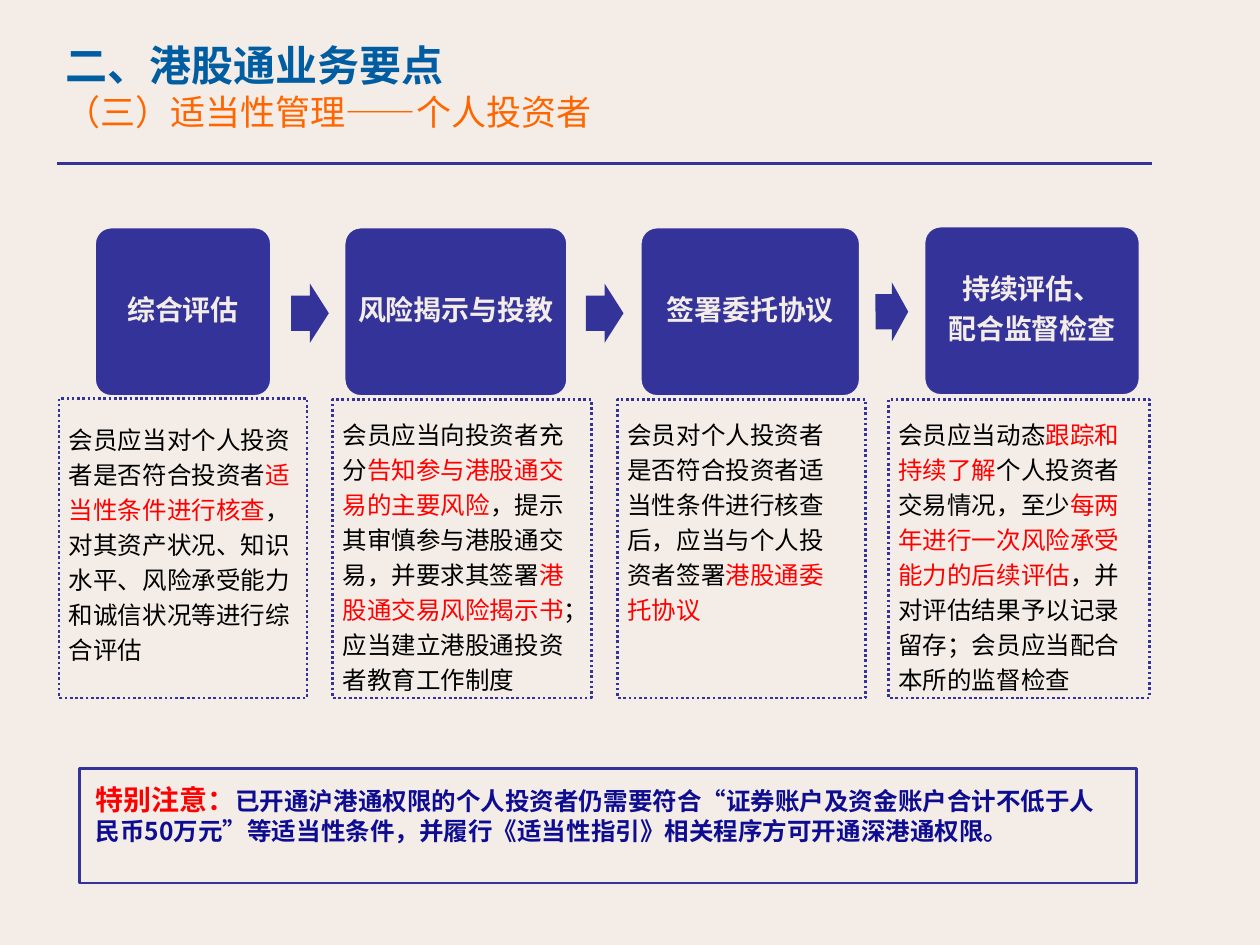
from itertools import cycle

from lxml.etree import SubElement
from pptx import Presentation
from pptx.dml.color import RGBColor
from pptx.enum.dml import MSO_LINE as Dash
from pptx.enum.shapes import MSO_CONNECTOR as Conn, MSO_SHAPE as Kind
from pptx.enum.text import MSO_ANCHOR as Anchor, MSO_AUTO_SIZE as Fit, PP_ALIGN as Align
from pptx.oxml.ns import qn
from pptx.util import Cm, Pt

FONT = "Noto Sans CJK SC"
NAVY, CREAM, RED, BLACK = "333399", "F4EDE7", "FF0000", "000000"

# left, top, width, lines of text
STEPS = [
    (1.9, 4.57, 3.58, ["综合评估"]),
    (6.93, 4.57, 4.52, ["风险揭示与投教"]),
    (12.9, 4.57, 4.45, ["签署委托协议"]),
    (18.62, 4.55, 4.37, ["持续评估、", "配合监督检查"]),
]
# left, top, width, turn
ARROWS = [(5.87, 5.72, 0.76, 0), (11.81, 5.72, 0.76, 0), (17.65, 5.69, 0.66, 359.8)]
# left, top, width, top inset, right inset, text with each red part between bars
CARDS = [
    (1.19, 8.03, 5.0, 0.43, 0.18,
     "会员应当对个人投资者是否符合投资者|适当性条件进行核查|，"
     "对其资产状况、知识水平、风险承受能力和诚信状况等进行综合评估"),
    (6.71, 8.05, 5.21, 0.3, 0.25,
     "会员应当向投资者充分|告知参与港股通交易的主要风险|，"
     "提示其审慎参与港股通交易，并要求其签署|港股通交易风险揭示书|；"
     "应当建立港股通投资者教育工作制度"),
    (12.45, 8.05, 5.0, 0.3, 0.45,
     "会员对个人投资者是否符合投资者适当性条件进行核查后，"
     "应当与个人投资者签署|港股通委托协议"),
    (17.91, 8.05, 5.26, 0.3, 0.18,
     "会员应当动态|跟踪和持续了解|个人投资者交易情况，至少|"
     "每两年进行一次风险承受能力的后续评估|，"
     "并对评估结果予以记录留存；会员应当配合本所的监督检查"),
]
NOTE = ("已开通沪港通权限的个人投资者仍需要符合“证券账户及资金账户合计不低于人民币50万元”"
        "等适当性条件，并履行《适当性指引》相关程序方可开通深港通权限。")


def color(code):
    return RGBColor.from_string(code)


def assign(item, **values):
    for name, value in values.items():
        setattr(item, name, value)


def add_run(para, text, size, code, bold=False):
    run = para.add_run()
    run.text = text
    assign(run.font, name=FONT, size=Pt(size), bold=bold)
    run.font.color.rgb = color(code)
    SubElement(run.font._element, qn("a:ea")).set("typeface", FONT)


def set_frame(frame, left, top, right, bottom, anchor):
    assign(frame, word_wrap=True, auto_size=Fit.NONE, vertical_anchor=anchor,
           margin_left=Cm(left), margin_top=Cm(top),
           margin_right=Cm(right), margin_bottom=Cm(bottom))


def add_shape(slide, kind, box, fill=None, line=None, width=1.5):
    shape = slide.shapes.add_shape(kind, *map(Cm, box))
    shape.shadow.inherit = False
    for part, code in ((shape.fill, fill), (shape.line.fill, line)):
        if code:
            part.solid()
            part.fore_color.rgb = color(code)
        else:
            part.background()
    if line:
        shape.line.width = Pt(width)
    return shape


def add_title(slide):
    title = slide.shapes.title
    assign(title, left=Cm(1.14), top=Cm(0.69), width=Cm(18.21), height=Cm(2.08))
    frame = title.text_frame
    set_frame(frame, 0.18, 0.1, 0.18, 0.1, Anchor.MIDDLE)
    head, sub = frame.paragraphs[0], frame.add_paragraph()
    head.alignment = sub.alignment = Align.LEFT
    add_run(head, "二、港股通业务要点", 24, "005DA2", True)
    add_run(sub, "（三）适当性管理——个人投资者", 20, "FF6600")


def add_rule(slide):
    rule = slide.shapes.add_connector(Conn.STRAIGHT, Cm(1.14), Cm(3.3), Cm(23.22), Cm(3.3))
    rule.line.color.rgb = color(NAVY)
    rule.line.width = Pt(2)
    SubElement(rule._element.spPr, qn("a:effectLst"))


def add_step(slide, left, top, width, lines):
    step = add_shape(slide, Kind.ROUNDED_RECTANGLE, (left, top, width, 3.43), NAVY, CREAM, 2)
    step.adjustments[0] = 0.1
    frame = step.text_frame
    set_frame(frame, 0.1, 0.1, 0.1, 0.1, Anchor.MIDDLE)
    for i, text in enumerate(lines):
        para = frame.add_paragraph() if i else frame.paragraphs[0]
        assign(para, alignment=Align.CENTER, line_spacing=0.9, space_after=Pt(5.6))
        add_run(para, text, 16, CREAM, True)


def add_arrow(slide, left, top, width, turn):
    arrow = add_shape(slide, Kind.RIGHT_ARROW, (left, top, width, 1.19), NAVY)
    arrow.adjustments[0] = 0.6
    arrow.rotation = turn


def add_card(slide, left, top, width, above, right, text):
    card = add_shape(slide, Kind.RECTANGLE, (left, top, width, 14.07 - top), line=NAVY)
    card.line.dash_style = Dash.ROUND_DOT
    set_frame(card.text_frame, 0.2, above, right, 0, Anchor.TOP)
    para = card.text_frame.paragraphs[0]
    assign(para, alignment=Align.LEFT, line_spacing=Pt(20))
    for part, code in zip(text.split("|"), cycle((BLACK, RED))):
        add_run(para, part, 14, code)


def add_note(slide):
    note = add_shape(slide, Kind.RECTANGLE, (1.6, 15.49, 21.31, 2.31), line=NAVY)
    set_frame(note.text_frame, 0.33, 0.28, 0.58, 0.1, Anchor.TOP)
    para = note.text_frame.paragraphs[0]
    para.alignment = Align.LEFT
    add_run(para, "特别注意：", 16, RED, True)
    add_run(para, NOTE, 14, "0E0D91", True)


def main():
    deck = Presentation()
    assign(deck, slide_width=Cm(25.4), slide_height=Cm(19.05))
    slide = deck.slides.add_slide(deck.slide_layouts[5])
    back = slide.background.fill
    back.solid()
    back.fore_color.rgb = color(CREAM)
    add_title(slide)
    add_rule(slide)
    for draw, rows in ((add_step, STEPS), (add_arrow, ARROWS), (add_card, CARDS)):
        for row in rows:
            draw(slide, *row)
    add_note(slide)
    deck.save("out.pptx")


if __name__ == "__main__":
    main()
